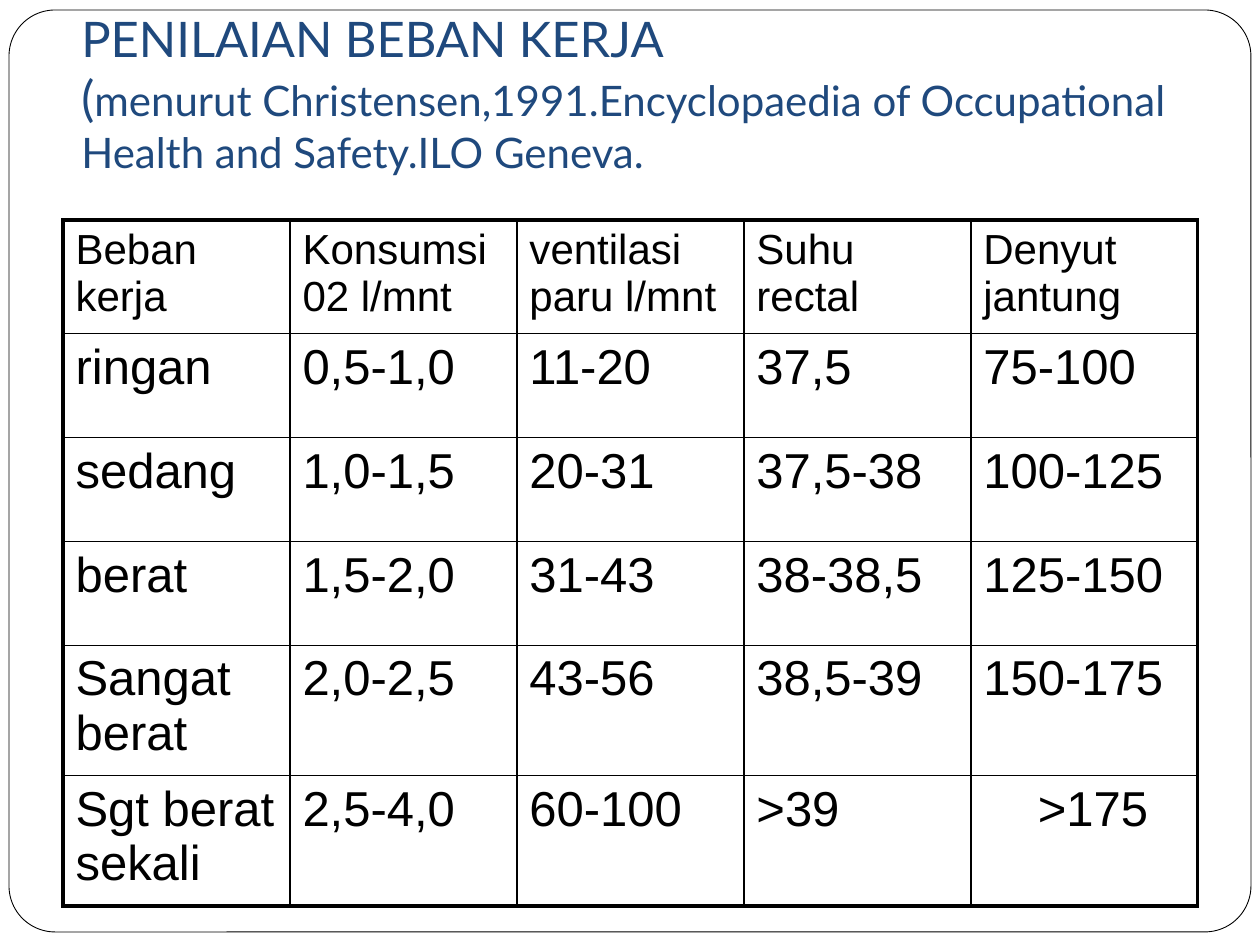
from dataclasses import dataclass

from lxml.etree import SubElement
from pptx import Presentation
from pptx.dml.color import RGBColor
from pptx.enum.shapes import MSO_SHAPE
from pptx.enum.text import MSO_ANCHOR
from pptx.oxml.ns import qn
from pptx.util import Emu, Pt

PX = 914400 // 126
COLORS = {"ink": "000000", "paper": "FFFFFF", "title": "1F497D"}
THIN, THICK = 1, 2.25
COLUMN_WIDTH = 227
ROW_HEIGHTS = [105, 104, 104, 104, 122, 122]
LAST_VALUE_INDENT = 67
ROWS = [
    ["Beban kerja", "Konsumsi 02 l/mnt", "ventilasi paru l/mnt", "Suhu rectal", "Denyut jantung"],
    ["ringan", "0,5-1,0", "11-20", "37,5", "75-100"],
    ["sedang", "1,0-1,5", "20-31", "37,5-38", "100-125"],
    ["berat", "1,5-2,0", "31-43", "38-38,5", "125-150"],
    ["Sangat berat", "2,0-2,5", "43-56", "38,5-39", "150-175"],
    ["Sgt berat sekali", "2,5-4,0", "60-100", ">39", ">175"],
]


@dataclass(frozen=True)
class Span:
    text: str
    size: int
    font: str
    color: str


@dataclass(frozen=True)
class Area:
    left: int
    top: int
    width: int
    height: int

    def emu(self) -> list[Emu]:
        return [Emu(value * PX) for value in (self.left, self.top, self.width, self.height)]


FRAME = Area(9, 10, 1242, 922)
TITLE = Area(69, 0, 1134, 190)
TABLE = Area(63, 220, 5 * COLUMN_WIDTH, sum(ROW_HEIGHTS))
TITLE_SPANS = [
    Span("PENILAIAN BEBAN KERJA \v(", 28, "Lato", "title"),
    Span("menurut Christensen,1991.Encyclopaedia of Occupational Health and Safety.ILO Geneva.",
         24, "Lato", "title"),
]


def rgb(name: str) -> RGBColor:
    return RGBColor.from_string(COLORS[name])


def write(para, span: Span) -> None:
    """Add the span to the paragraph; a vertical tab becomes a line break."""
    for index, line in enumerate(span.text.split("\v")):
        if index:
            para.add_line_break()
        run = para.add_run()
        run.text = line
        for name, value in {"size": Pt(span.size), "name": span.font}.items():
            setattr(run.font, name, value)
        run.font.color.rgb = rgb(span.color)


def draw_frame(page) -> None:
    frame = page.shapes.add_shape(MSO_SHAPE.ROUNDED_RECTANGLE, *FRAME.emu())
    frame.adjustments[0] = 0.05
    frame.shadow.inherit = False
    frame.fill.solid()
    frame.fill.fore_color.rgb = rgb("paper")
    frame.line.color.rgb = rgb("ink")
    frame.line.width = Pt(0.5)


def draw_title(page) -> None:
    box = page.shapes.add_textbox(*TITLE.emu()).text_frame
    settings = {"word_wrap": True, "vertical_anchor": MSO_ANCHOR.BOTTOM,
                "margin_bottom": Emu(13 * PX)}
    for name, value in settings.items():
        setattr(box, name, value)
    for span in TITLE_SPANS:
        write(box.paragraphs[0], span)


def set_borders(cell, widths: dict[str, float]) -> None:
    """Put the borders before the cell fill, as the schema asks."""
    properties = cell._tc.get_or_add_tcPr()
    for index, (side, width) in enumerate(widths.items()):
        line = SubElement(properties, qn(f"a:ln{side}"), w=str(int(Pt(width))))
        fill = SubElement(line, qn("a:solidFill"))
        SubElement(fill, qn("a:srgbClr"), val=COLORS["ink"])
        properties.insert(index, line)


def draw_table(page) -> None:
    last_row, last_column = len(ROWS) - 1, len(ROWS[0]) - 1
    table = page.shapes.add_table(len(ROWS), len(ROWS[0]), *TABLE.emu()).table
    for name in ("first_row", "horz_banding"):
        setattr(table, name, False)
    for column in table.columns:
        column.width = Emu(COLUMN_WIDTH * PX)
    for r, (height, texts) in enumerate(zip(ROW_HEIGHTS, ROWS)):
        table.rows[r].height = Emu(height * PX)
        for c, text in enumerate(texts):
            cell = table.cell(r, c)
            cell.fill.solid()
            cell.fill.fore_color.rgb = rgb("paper")
            write(cell.text_frame.paragraphs[0], Span(text, 28 if r else 24, "Arial", "ink"))
            set_borders(cell, {
                "L": THIN if c else THICK,
                "R": THICK if c == last_column else THIN,
                "T": THIN if r else THICK,
                "B": THICK if r == last_row else THIN,
            })
    table.cell(last_row, last_column).margin_left = Emu(LAST_VALUE_INDENT * PX)


def main() -> None:
    deck = Presentation()
    for name, pixels in {"slide_width": 1260, "slide_height": 945}.items():
        setattr(deck, name, Emu(pixels * PX))
    page = deck.slides.add_slide(deck.slide_layouts[6])
    draw_frame(page)
    draw_title(page)
    draw_table(page)
    deck.save("out.pptx")


if __name__ == "__main__":
    main()
